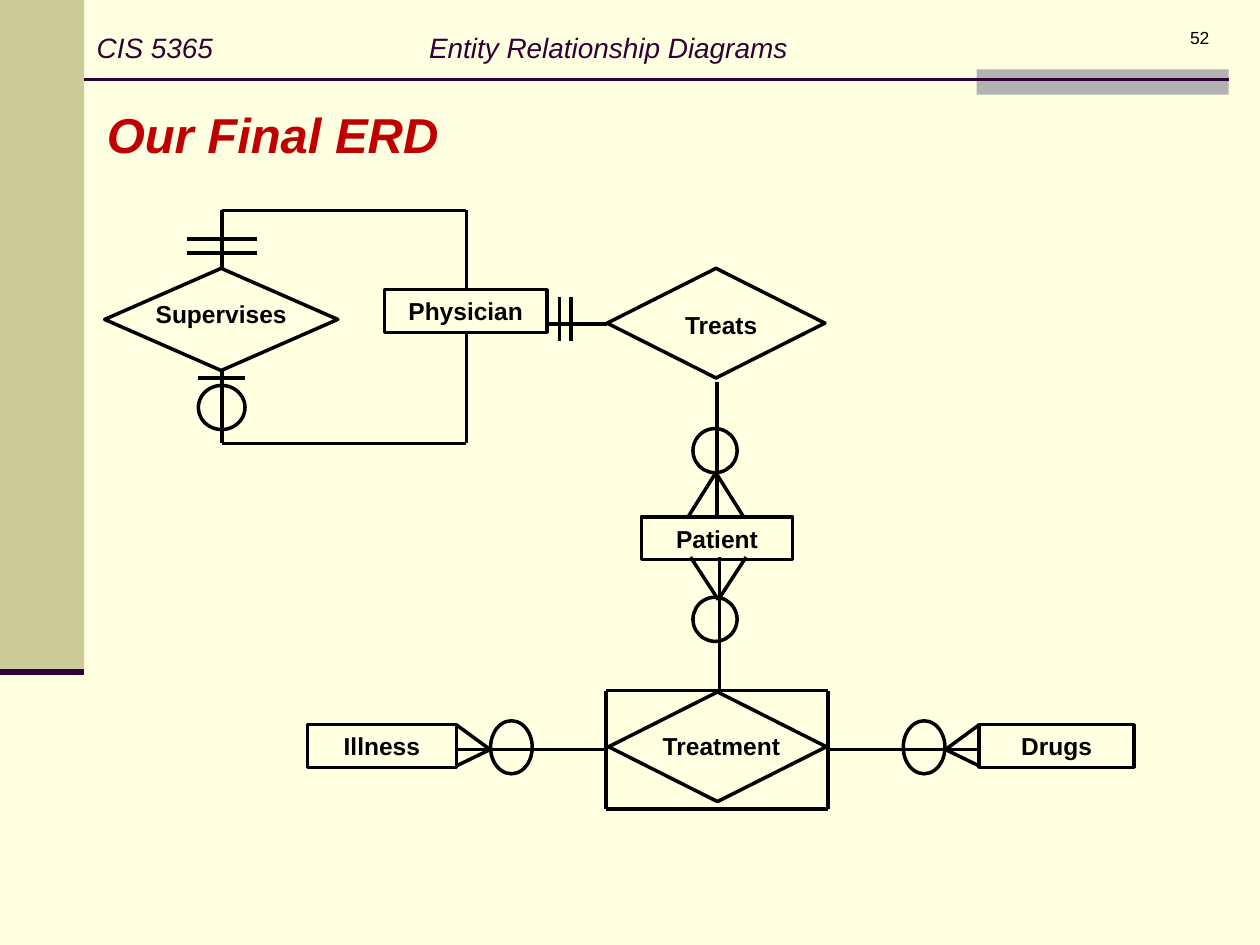
from lxml import etree
from pptx import Presentation
from pptx.dml.color import RGBColor
from pptx.enum.shapes import MSO_CONNECTOR, MSO_SHAPE
from pptx.enum.text import MSO_ANCHOR, PP_ALIGN
from pptx.oxml.ns import qn
from pptx.util import Cm, Pt

RECT, OVAL, GEM = MSO_SHAPE.RECTANGLE, MSO_SHAPE.OVAL, MSO_SHAPE.DIAMOND
STRAIGHT = MSO_CONNECTOR.STRAIGHT
LEFT, MID, RIGHT = PP_ALIGN.LEFT, PP_ALIGN.CENTER, PP_ALIGN.RIGHT
MIDDLE, TOP = MSO_ANCHOR.MIDDLE, MSO_ANCHOR.TOP

CREAM = RGBColor(0xFF, 0xFF, 0xE1)
KHAKI = RGBColor(0xCC, 0xCC, 0x99)
GREY = RGBColor(0xB2, 0xB2, 0xB2)
PLUM = RGBColor(0x33, 0x00, 0x33)
RED = RGBColor(0xC0, 0x00, 0x00)
BLACK = RGBColor(0, 0, 0)

HEAD = {"size": Pt(16), "italic": True, "name": "Arial"}
PAGE = {"size": Pt(10), "name": "Arial"}
TITLE = {"size": Pt(28), "bold": True, "italic": True, "name": "Arial"}
LABEL = {"size": Pt(14), "bold": True, "name": "Arial"}


def place(box, part):
    x, y, w, h = part
    return Cm(box[0] + x), Cm(box[1] + y), Cm(w), Cm(h)


def write(shape, text, form, color=BLACK, align=LEFT, anchor=MIDDLE):
    frame = shape.text_frame
    frame.word_wrap = True
    frame.vertical_anchor = anchor
    para = frame.paragraphs[0]
    para.alignment = align
    run = para.add_run()
    run.text = text
    for key, value in form.items():
        setattr(run.font, key, value)
    run.font.color.rgb = color


def label(slide, box, part, text, form=LABEL, **look):
    write(slide.shapes.add_textbox(*place(box, part)), text, form, **look)


def block(slide, box, part, color):
    shape = slide.shapes.add_shape(RECT, *place(box, part))
    shape.shadow.inherit = False
    shape.fill.solid()
    shape.fill.fore_color.rgb = color
    shape.line.fill.background()


def outline(slide, box, kind, part, text=None):
    shape = slide.shapes.add_shape(kind, *place(box, part))
    shape.shadow.inherit = False
    shape.fill.background()
    shape.line.color.rgb = BLACK
    shape.line.width = Pt(2)
    if text:
        write(shape, text, LABEL, align=MID)


def chain(slide, box, *points, color=BLACK, width=2):
    spots = [(Cm(box[0] + x), Cm(box[1] + y)) for x, y in points]
    for start, end in zip(spots, spots[1:]):
        link = slide.shapes.add_connector(STRAIGHT, *start, *end)
        link.line.color.rgb = color
        link.line.width = Pt(width)
        etree.SubElement(link._element.spPr, qn("a:effectLst"))


def frame(slide, box):
    block(slide, box, (0, 0, 1.7, 13.54), KHAKI)
    block(slide, box, (19.69, 1.4, 5.08, 0.51), GREY)
    chain(slide, box, (1.7, 1.6), (24.77, 1.6), color=PLUM, width=1.5)
    chain(slide, box, (0, 13.54), (1.7, 13.54), color=PLUM, width=3.5)


def header(slide, box):
    label(slide, box, (0, 0, 6, 1.9), "CIS 5365", HEAD, color=PLUM)
    label(slide, box, (6.7, 0, 9, 1.9), "Entity Relationship Diagrams",
          HEAD, color=PLUM)
    label(slide, box, (17.65, 0.43, 5.28, 1.27), "52", PAGE,
          align=RIGHT, anchor=TOP)


def title(slide, box):
    shape = slide.shapes.title
    shape.left, shape.top, shape.width, shape.height = place((0, 0), box)
    write(shape, "Our Final ERD", TITLE, color=RED)


def loop(slide, box):
    mid, far, low = 2.36, 7.29, 4.7
    chain(slide, box, (mid, 1.17), (mid, 0), (far, 0), (far, 1.6))
    chain(slide, box, (far, 2.46), (far, low), (mid, low), (mid, 3.23))
    for y, half in ((0.58, 0.71), (0.86, 0.71), (3.38, 0.47)):
        chain(slide, box, (mid - half, y), (mid + half, y))
    outline(slide, box, OVAL, (mid - 0.47, 3.53, 0.94, 0.89))
    outline(slide, box, GEM, (0, 1.17, 4.7, 2.06))
    label(slide, box, (0, 1.71, 4.7, 0.74), "Supervises", align=MID)
    outline(slide, box, RECT, (5.64, 1.6, 3.28, 0.86), "Physician")


def treats(slide, box):
    chain(slide, box, (0, 1.12), (1.19, 1.12))
    for x in (0.23, 0.46):
        chain(slide, box, (x, 0.58), (x, 1.47))
    outline(slide, box, GEM, (1.19, 0, 4.39, 2.21))
    label(slide, box, (2.51, 0.71, 3.38, 0.86), "Treats")


def patient(slide, box):
    outline(slide, box, RECT, (0, 2.72, 3.05, 0.86), "Patient")
    for mid, end, base, tip, ring in ((1.52, 0, 2.72, 1.83, 0.94),
                                      (1.57, 6.25, 3.53, 4.39, 4.34)):
        chain(slide, box, (mid, end), (mid, base))
        chain(slide, box, (mid - 0.58, base), (mid - 0.02, tip),
              (mid + 0.54, base))
        outline(slide, box, OVAL, (1.04, ring, 0.89, 0.89))


def treatment(slide, box):
    w, h = box[2:]
    chain(slide, box, (0, 0), (w, 0), (w, h), (0, h), (0, 0))
    outline(slide, box, GEM, (0.05, 0.03, 4.39, 2.21))
    label(slide, box, (0.89, 0.69, 3.4, 0.86), "Treatment")


def side(slide, box, name, turn):
    w = box[2]
    edge = w if turn > 0 else 0
    outline(slide, box, RECT, (0, 0.08, w, 0.86), name)
    chain(slide, box, (edge, 0.58), (edge + turn * 3.02, 0.58))
    chain(slide, box, (edge, 0.08), (edge + turn * 0.68, 0.58), (edge, 0.91))
    outline(slide, box, OVAL, (edge + turn * 1.11 - 0.42, 0, 0.84, 1.07))


def main():
    deck = Presentation()
    deck.slide_width, deck.slide_height = Cm(25.4), Cm(19.05)
    slide = deck.slides.add_slide(deck.slide_layouts[5])
    slide.background.fill.solid()
    slide.background.fill.fore_color.rgb = CREAM
    frame(slide, (0, 0, 25.4, 19.05))
    header(slide, (1.7, 0, 23.29, 1.9))
    title(slide, (1.9, 1.97, 13.34, 1.45))
    loop(slide, (2.11, 4.24, 8.92, 4.7))
    treats(slide, (11.05, 5.41, 5.58, 2.21))
    patient(slide, (12.93, 7.7, 3.05, 6.25))
    treatment(slide, (12.22, 13.92, 4.47, 2.39))
    side(slide, (6.2, 14.53, 3, 1.07), "Illness", 1)
    side(slide, (19.74, 14.53, 3.12, 1.07), "Drugs", -1)
    deck.save("out.pptx")


if __name__ == "__main__":
    main()
